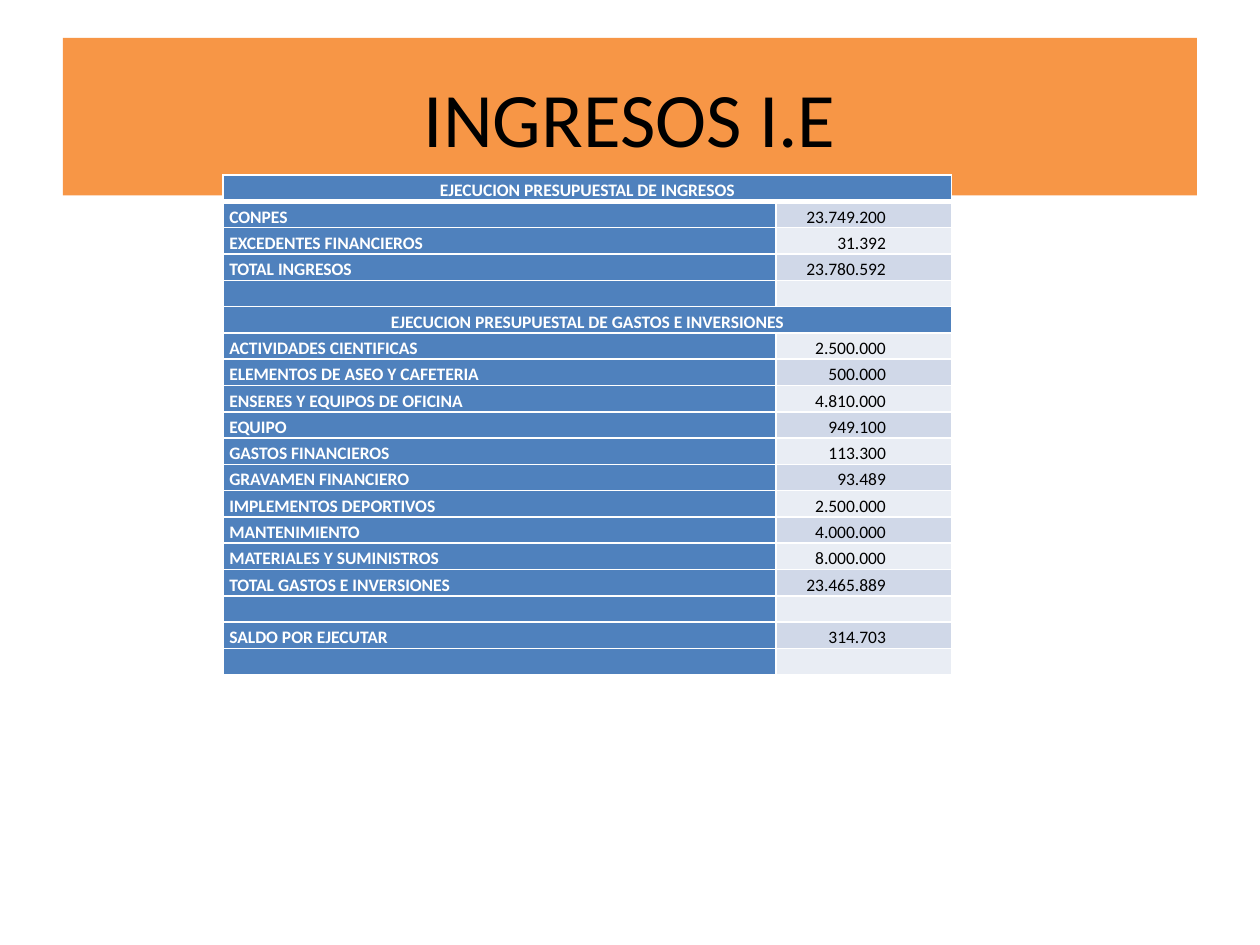
from dataclasses import dataclass

from lxml import etree
from pptx import Presentation
from pptx.dml.color import RGBColor
from pptx.enum.shapes import MSO_SHAPE
from pptx.enum.text import MSO_ANCHOR, PP_ALIGN
from pptx.oxml.ns import qn
from pptx.util import Inches, Pt

RECTANGLE = MSO_SHAPE.RECTANGLE
MIDDLE, BOTTOM = MSO_ANCHOR.MIDDLE, MSO_ANCHOR.BOTTOM
LEFT, CENTER, RIGHT = PP_ALIGN.LEFT, PP_ALIGN.CENTER, PP_ALIGN.RIGHT

ORANGE = RGBColor(0xF7, 0x96, 0x46)
BLUE = RGBColor(0x4F, 0x81, 0xBD)
BAND_DARK = RGBColor(0xD0, 0xD8, 0xE8)
BAND_LIGHT = RGBColor(0xE9, 0xED, 0xF4)
WHITE = RGBColor(0xFF, 0xFF, 0xFF)
BLACK = RGBColor(0, 0, 0)

FONT = "Calibri"
WIDTH, HEIGHT = Inches(10), Inches(7.5)
ROW_HEIGHT = Inches(3.97 / 19)
COLUMN_WIDTHS = Inches(4.39), Inches(1.39)
SIDE_INSET, AMOUNT_INSET = Inches(0.05), Inches(0.52)


@dataclass(frozen=True)
class BudgetRow:
    label: str = ""
    amount: str = ""
    heading: bool = False


@dataclass(frozen=True)
class CellStyle:
    fill: RGBColor
    color: RGBColor
    bold: bool
    align: PP_ALIGN
    right_inset: int = SIDE_INSET


ROWS = [
    BudgetRow("EJECUCION PRESUPUESTAL DE INGRESOS", heading=True),
    BudgetRow("CONPES", "23.749.200"),
    BudgetRow("EXCEDENTES FINANCIEROS", "31.392"),
    BudgetRow("TOTAL INGRESOS", "23.780.592"),
    BudgetRow(),
    BudgetRow("EJECUCION PRESUPUESTAL DE GASTOS E INVERSIONES", heading=True),
    BudgetRow("ACTIVIDADES CIENTIFICAS", "2.500.000"),
    BudgetRow("ELEMENTOS DE ASEO Y CAFETERIA", "500.000"),
    BudgetRow("ENSERES Y EQUIPOS DE OFICINA", "4.810.000"),
    BudgetRow("EQUIPO", "949.100"),
    BudgetRow("GASTOS FINANCIEROS", "113.300"),
    BudgetRow("GRAVAMEN FINANCIERO", "93.489"),
    BudgetRow("IMPLEMENTOS DEPORTIVOS", "2.500.000"),
    BudgetRow("MANTENIMIENTO", "4.000.000"),
    BudgetRow("MATERIALES Y SUMINISTROS", "8.000.000"),
    BudgetRow("TOTAL GASTOS E INVERSIONES", "23.465.889"),
    BudgetRow(),
    BudgetRow("SALDO POR EJECUTAR", "314.703"),
    BudgetRow(),
]
HEADING = CellStyle(BLUE, WHITE, True, CENTER)
LABEL = CellStyle(BLUE, WHITE, True, LEFT)
AMOUNTS = [CellStyle(fill, BLACK, False, RIGHT, AMOUNT_INSET)
           for fill in (BAND_LIGHT, BAND_DARK)]


def add_span(para, text: str, size: float, color: RGBColor, bold: bool) -> None:
    span = para.add_run()
    span.text = text
    span.font.name, span.font.size = FONT, Pt(size)
    span.font.bold = bold
    span.font.color.rgb = color


def set_borders(cell, top: float, bottom: float) -> None:
    properties = cell._tc.get_or_add_tcPr()
    for side, points in (("L", 1), ("R", 1), ("T", top), ("B", bottom)):
        line = etree.SubElement(properties, qn(f"a:ln{side}"), w=str(Pt(points)))
        fill = etree.SubElement(line, qn("a:solidFill"))
        etree.SubElement(fill, qn("a:srgbClr"), val=str(WHITE))


def fill_cell(cell, text: str, style: CellStyle) -> None:
    cell.fill.solid()
    cell.fill.fore_color.rgb = style.fill
    cell.vertical_anchor = BOTTOM
    cell.margin_left, cell.margin_right = SIDE_INSET, style.right_inset
    cell.margin_top = cell.margin_bottom = 0
    para = cell.text_frame.paragraphs[0]
    para.alignment = style.align
    para.line_spacing = 1.15
    if text:
        add_span(para, text, 10, style.color, style.bold)
    else:
        # Keeps an empty row as low as the others
        etree.SubElement(para._p, qn("a:endParaRPr"), sz="1000")


def add_title(page, text: str) -> None:
    box = page.shapes.add_shape(RECTANGLE, int(WIDTH * 0.05), int(HEIGHT * 0.04),
                                int(WIDTH * 0.9), Inches(1.25))
    box.shadow.inherit = False
    box.fill.solid()
    box.fill.fore_color.rgb = ORANGE
    box.line.fill.background()
    frame = box.text_frame
    frame.word_wrap = True
    frame.vertical_anchor = MIDDLE
    para = frame.paragraphs[0]
    para.alignment = CENTER
    add_span(para, text, 44, BLACK, False)


def add_budget(page, rows: list[BudgetRow]) -> None:
    table = page.shapes.add_table(
        len(rows), len(COLUMN_WIDTHS), Inches(1.77), Inches(1.39),
        sum(COLUMN_WIDTHS), ROW_HEIGHT * len(rows)).table
    for column, width in zip(table.columns, COLUMN_WIDTHS):
        column.width = width
    for index, row in enumerate(rows):
        table.rows[index].height = ROW_HEIGHT
        label, amount = table.cell(index, 0), table.cell(index, 1)
        # A thick rule parts the first heading from the rows below
        for cell in (label, amount):
            set_borders(cell, 3 if index == 1 else 1, 3 if index == 0 else 1)
        if row.heading:
            label.merge(amount)
            fill_cell(label, row.label, HEADING)
        else:
            fill_cell(label, row.label, LABEL)
            fill_cell(amount, row.amount, AMOUNTS[index % 2])


def main() -> None:
    deck = Presentation()
    deck.slide_width, deck.slide_height = WIDTH, HEIGHT
    page = deck.slides.add_slide(deck.slide_layouts[6])
    add_title(page, "INGRESOS I.E")
    add_budget(page, ROWS)
    deck.save("out.pptx")


if __name__ == "__main__":
    main()
